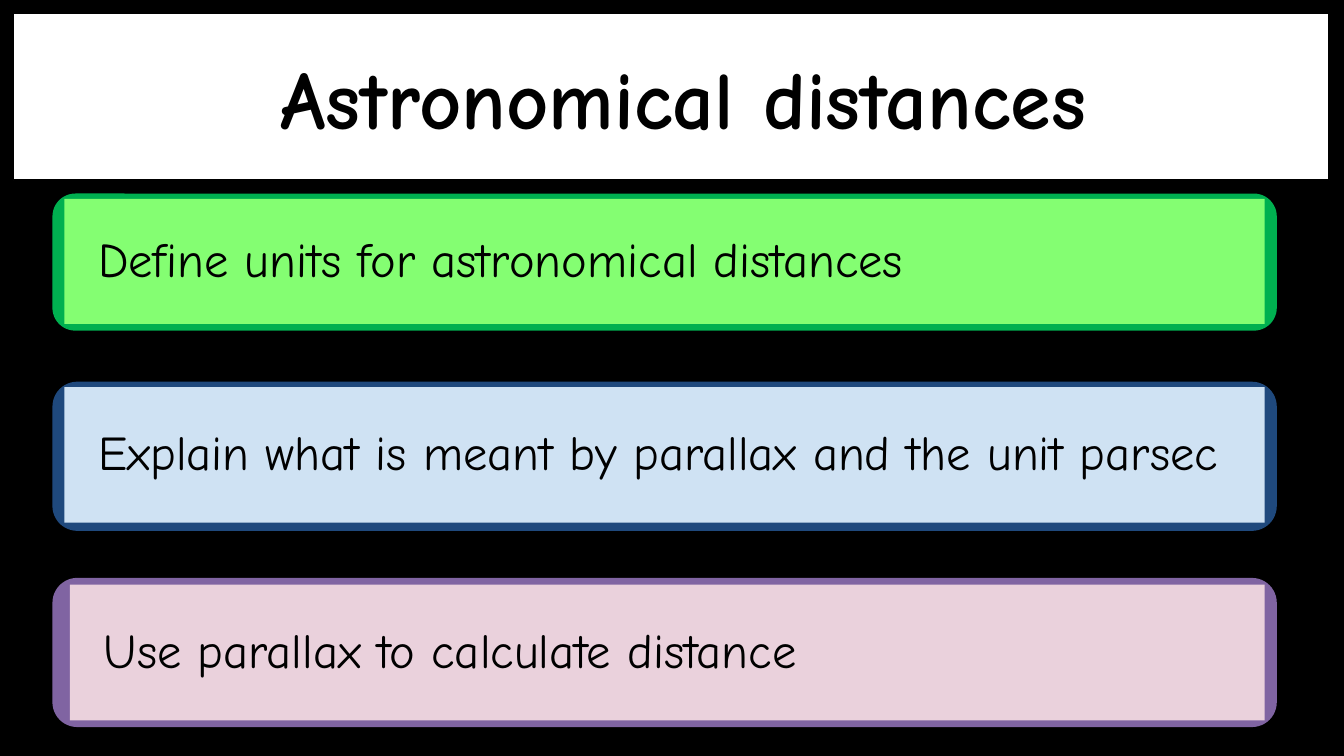
from pptx import Presentation
from pptx.dml.color import RGBColor
from pptx.enum.shapes import MSO_SHAPE
from pptx.enum.text import MSO_ANCHOR, PP_ALIGN
from pptx.util import Inches, Pt

RECTANGLE = MSO_SHAPE.RECTANGLE
ROUNDED = MSO_SHAPE.ROUNDED_RECTANGLE
MIDDLE = MSO_ANCHOR.MIDDLE
LEFT, CENTER = PP_ALIGN.LEFT, PP_ALIGN.CENTER

FONT = "Comic Neue"
BLACK, WHITE = "000000", "FFFFFF"
FRAME_LEFT, FRAME_WIDTH = 0.39, 9.11
PANEL_RIGHT = 9.41

# Objective, frame top and height, panel left, top and height, frame and panel colours
OBJECTIVES = [
    ("Define units for astronomical distances",
     1.44, 1.02, 0.48, 1.48, 0.93, "00B050", "84FE72"),
    ("Explain what is meant by parallax and the unit parsec",
     2.84, 1.11, 0.48, 2.88, 1.01, "1F497D", "CFE2F3"),
    ("Use parallax to calculate distance",
     4.3, 1.11, 0.52, 4.35, 1.01, "8064A2", "EAD1DC"),
]


def color(hex_string):
    return RGBColor.from_string(hex_string)


def add_box(shapes, kind, left, top, width, height, fill):
    shape = shapes.add_shape(kind, Inches(left), Inches(top), Inches(width), Inches(height))
    shape.shadow.inherit = False
    shape.fill.solid()
    shape.fill.fore_color.rgb = color(fill)
    shape.line.fill.background()
    return shape


def set_text(shape, text, size, alignment, margins, bold=False):
    frame = shape.text_frame
    frame.word_wrap = True
    frame.vertical_anchor = MIDDLE
    (frame.margin_left, frame.margin_top,
     frame.margin_right, frame.margin_bottom) = map(Inches, margins)
    paragraph = frame.paragraphs[0]
    paragraph.text = text
    paragraph.alignment = alignment
    paragraph.font.name = FONT
    paragraph.font.size = Pt(size)
    paragraph.font.bold = bold
    paragraph.font.color.rgb = color(BLACK)
    return paragraph


def add_title(slide, text):
    title = add_box(slide.shapes, RECTANGLE, 0.1, 0.1, 9.79, 1.24, WHITE)
    title.line.color.rgb = color(BLACK)
    title.line.width = Pt(0.75)
    # The wider left margin sets the title slightly right of centre
    set_text(title, text, 44, CENTER, (0.28, 0.05, 0.1, 0.05), bold=True)


def add_objective(shapes, text, frame_top, frame_height,
                  panel_left, panel_top, panel_height, frame_fill, panel_fill):
    add_box(shapes, ROUNDED, FRAME_LEFT, frame_top, FRAME_WIDTH, frame_height, frame_fill)
    panel = add_box(shapes, RECTANGLE, panel_left, panel_top,
                    PANEL_RIGHT - panel_left, panel_height, panel_fill)
    paragraph = set_text(panel, text, 26, LEFT, (0.25, 0, 0.25, 0))
    paragraph.line_spacing = 0.9
    paragraph.space_after = Pt(11.2)


def main():
    # Widescreen slide, 16:9
    presentation = Presentation()
    presentation.slide_width = Inches(10)
    presentation.slide_height = Inches(10 * 9 / 16)
    slide = presentation.slides.add_slide(presentation.slide_layouts[6])
    slide.background.fill.solid()
    slide.background.fill.fore_color.rgb = color(BLACK)

    # Heading
    add_title(slide, "Astronomical distances")

    # Framed learning objectives, kept together as one group
    group = slide.shapes.add_group_shape()
    for objective in OBJECTIVES:
        add_objective(group.shapes, *objective)

    presentation.save("out.pptx")


if __name__ == "__main__":
    main()
